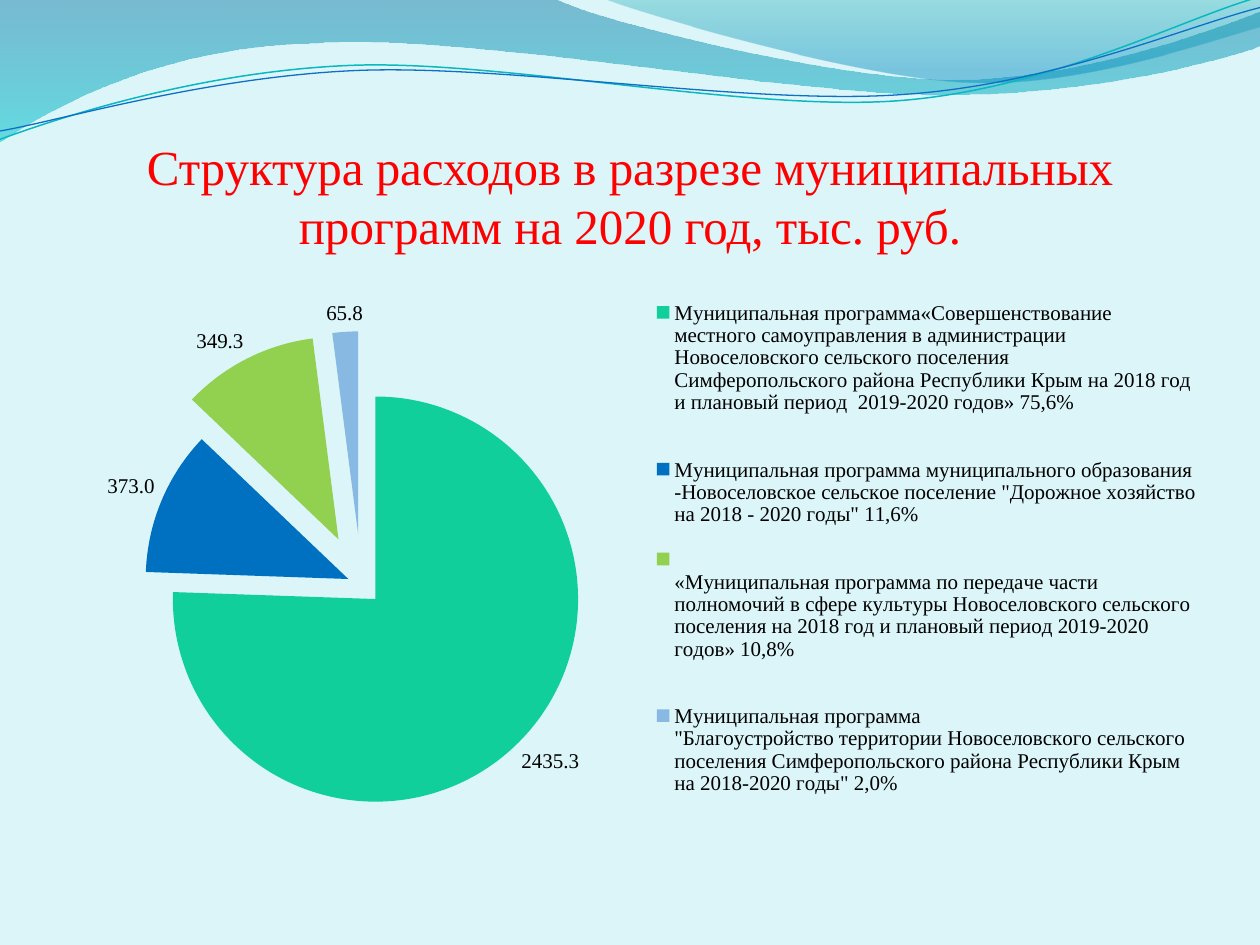
import pptx
import pptx.chart.data
import pptx.dml.color
import pptx.enum.chart
import pptx.enum.text
import pptx.oxml
import pptx.oxml.ns
import pptx.util

WIDTH, HEIGHT = 10, 7.5
THEME = {
    "background": "DBF5F9", "title": "FF0000", "text": "000000",
    "font": "Times New Roman", "title_size": 28, "chart_size": 12,
}
TITLE = "Структура расходов в разрезе муниципальных программ на 2020 год, тыс. руб."

# Legend text, value, colour, explosion in percent
PROGRAMS = [
    ("Муниципальная программа«Совершенствование местного самоуправления в администрации "
     "Новоселовского сельского поселения\nСимферопольского района Республики Крым на 2018 год "
     "и плановый период  2019-2020 годов» 75,6%\n", 2435.3, "10CF9B", 10),
    ("Муниципальная программа муниципального образования -Новоселовское сельское поселение "
     "\"Дорожное хозяйство на 2018 - 2020 годы\" 11,6%", 373.0, "0070C0", 7),
    ("\n«Муниципальная программа по передаче части полномочий в сфере культуры Новоселовского "
     "сельского поселения на 2018 год и плановый период 2019-2020 годов» 10,8%\n",
     349.3, "92D050", 25),
    ("Муниципальная программа\n\"Благоустройство территории Новоселовского сельского поселения "
     "Симферопольского района Республики Крым на 2018-2020 годы\" 2,0%", 65.8, "87B9E2", 25),
]

# Left, top, width, height as shares of the slide, or of the chart for its parts
CHART_WIDTH = 9.11
TITLE_BOX = (0.05, 0.77 / HEIGHT, 0.9, 1.25 / HEIGHT)
CHART_BOX = (0.05, 2.12 / HEIGHT, CHART_WIDTH / WIDTH, 0.64)
PIE_BOX = (0.08, 0.19, 0.36, 0.67)
LEGEND_BOX = (0.52, 0.02, 4.3 / CHART_WIDTH, 0.89)

# Outlines in inches: a pair is a straight step, six numbers are a Bezier step.
# Gradient stops: position, colour, opacity in percent
WAVES = [
    ([(0, 0), (4.4, -0.01), (4.76, 0.17, 6.64, 0.63, 7.58, 0.63),
      (8.53, 0.63, 9.58, 0.26, 10, 0.09), (10.01, 0.36),
      (9.83, 0.44, 8.7, 0.76, 7.46, 0.75), (6.22, 0.75, 3.82, 0.28, 2.57, 0.34),
      (1.29, 0.36, 0.46, 0.83, -0.01, 1.13)],
     [(0, "0074A1", 45), (1, "00C6CF", 55)]),
    ([(4.79, -0.01), (5.09, 0.11, 6.82, 0.62, 7.69, 0.65),
      (8.56, 0.69, 9.61, 0.32, 10, 0.21), (10, 0)],
     [(0, "00A1A9", 30), (0.8, "008BBF", 45)]),
]
RIPPLES = [
    ([(-0.01, 1.11), (0.48, 0.93, 1.58, 0.57, 2.77, 0.52),
      (3.95, 0.47, 5.93, 0.89, 7.13, 0.8), (8.33, 0.71, 9.38, 0.15, 9.98, -0.02)],
     "0AB8BF", 0.85),
    ([(0, 1.04), (0.47, 0.96, 1.64, 0.61, 2.83, 0.56),
      (4.03, 0.51, 5.97, 0.84, 7.17, 0.75), (8.36, 0.67, 9.41, 0.21, 10, 0.06)],
     "0F6FC6", 0.75),
]
UNITS_PER_INCH = 1000

qn, nsdecls, parse_xml = pptx.oxml.ns.qn, pptx.oxml.ns.nsdecls, pptx.oxml.parse_xml


def color(name):
    return pptx.dml.color.RGBColor.from_string(name)


def on_slide(box):
    return [pptx.util.Inches(share * side) for share, side in zip(box, (WIDTH, HEIGHT) * 2)]


def add_outline(slide, outline, close):
    """Draw all points as straight steps, then join each Bezier step's three into a curve."""
    points = [(step[i] * UNITS_PER_INCH, step[i + 1] * UNITS_PER_INCH)
              for step in outline for i in range(0, len(step), 2)]
    builder = slide.shapes.build_freeform(
        *points[0], scale=pptx.util.Inches(1) / UNITS_PER_INCH)
    builder.add_line_segments(points[1:], close=close)
    shape = builder.convert_to_shape()
    shape.shadow.inherit = False
    lines = iter(list(shape._element.iter(qn("a:lnTo"))))
    for step in outline[1:]:
        straight = [next(lines) for _ in range(len(step) // 2)]
        if len(straight) == 1:
            continue
        curve = parse_xml(f'<a:cubicBezTo {nsdecls("a")}/>')
        straight[0].addprevious(curve)
        for line in straight:
            curve.append(line[0])
            line.getparent().remove(line)
    return shape


def add_wave(slide, outline, stops):
    shape = add_outline(slide, outline, True)
    shape.line.fill.background()
    shape.fill.gradient()
    shape.fill.gradient_angle = 270
    for stop, (position, name, _) in zip(shape.fill.gradient_stops, stops):
        stop.position = position
        stop.color.rgb = color(name)
    tones = list(shape._element.spPr.iter(qn("a:srgbClr")))
    for tone, (_, _, opacity) in zip(tones, stops):
        tone.append(parse_xml(f'<a:alpha {nsdecls("a")} val="{opacity * 1000}"/>'))


def add_ripple(slide, outline, name, width):
    shape = add_outline(slide, outline, False)
    shape.fill.background()
    shape.line.color.rgb = color(name)
    shape.line.width = pptx.util.Pt(width)


def style_font(font, size, name):
    font.name = THEME["font"]
    font.size = pptx.util.Pt(size)
    font.color.rgb = color(name)


def add_title(slide):
    text_frame = slide.shapes.add_textbox(*on_slide(TITLE_BOX)).text_frame
    text_frame.word_wrap = True
    text_frame.vertical_anchor = pptx.enum.text.MSO_ANCHOR.BOTTOM
    text_frame.margin_left = text_frame.margin_right = text_frame.margin_bottom = 0
    text_frame.text = TITLE
    paragraph = text_frame.paragraphs[0]
    paragraph.alignment = pptx.enum.text.PP_ALIGN.CENTER
    style_font(paragraph.runs[0].font, THEME["title_size"], THEME["title"])


def place_part(element, index, box, target=""):
    """Give a chart part a fixed place within the chart."""
    for layout in element.findall(qn("c:layout")):
        element.remove(layout)
    modes = '<c:xMode val="edge"/><c:yMode val="edge"/>'
    sizes = "".join(f'<c:{key} val="{share:.4f}"/>' for key, share in zip("xywh", box))
    element.insert(index, parse_xml(
        f'<c:layout {nsdecls("c")}><c:manualLayout>'
        f'{target}{modes}{sizes}</c:manualLayout></c:layout>'))


def add_pie(slide):
    names, values, _, explosions = zip(*PROGRAMS)
    data = pptx.chart.data.CategoryChartData(number_format="0.0")
    data.categories = names
    data.add_series("Series 1", values)
    chart = slide.shapes.add_chart(
        pptx.enum.chart.XL_CHART_TYPE.PIE, *on_slide(CHART_BOX), data).chart
    chart.has_title = False
    style_font(chart.font, THEME["chart_size"], THEME["text"])
    chart.has_legend = True
    chart.legend.position = pptx.enum.chart.XL_LEGEND_POSITION.RIGHT
    chart.legend.include_in_layout = False

    plot = chart.plots[0]
    plot.has_data_labels = True
    labels = plot.data_labels
    labels.show_value = True
    labels.show_percentage = False
    labels.number_format, labels.number_format_is_linked = "0.0", False
    labels.position = pptx.enum.chart.XL_LABEL_POSITION.OUTSIDE_END
    for index, (_, _, name, _) in enumerate(PROGRAMS):
        fill = plot.series[0].points[index].format.fill
        fill.solid()
        fill.fore_color.rgb = color(name)

    space = chart._chartSpace
    for point, explosion in zip(list(space.iter(qn("c:dPt"))), explosions):
        point.find(qn("c:spPr")).addprevious(parse_xml(
            f'<c:explosion {nsdecls("c")} val="{explosion}"/>'))
    space.find(qn("c:txPr")).addprevious(parse_xml(
        f'<c:spPr {nsdecls("c", "a")}><a:noFill/><a:ln><a:noFill/></a:ln></c:spPr>'))
    place_part(next(space.iter(qn("c:plotArea"))), 0, PIE_BOX,
               '<c:layoutTarget val="inner"/>')
    place_part(chart.legend._element, 1, LEGEND_BOX)


def main():
    presentation = pptx.Presentation()
    presentation.slide_width = pptx.util.Inches(WIDTH)
    presentation.slide_height = pptx.util.Inches(HEIGHT)
    slide = presentation.slides.add_slide(presentation.slide_layouts[6])
    slide.background.fill.solid()
    slide.background.fill.fore_color.rgb = color(THEME["background"])
    for wave in WAVES:
        add_wave(slide, *wave)
    for ripple in RIPPLES:
        add_ripple(slide, *ripple)
    add_title(slide)
    add_pie(slide)
    presentation.save("out.pptx")


if __name__ == "__main__":
    main()
